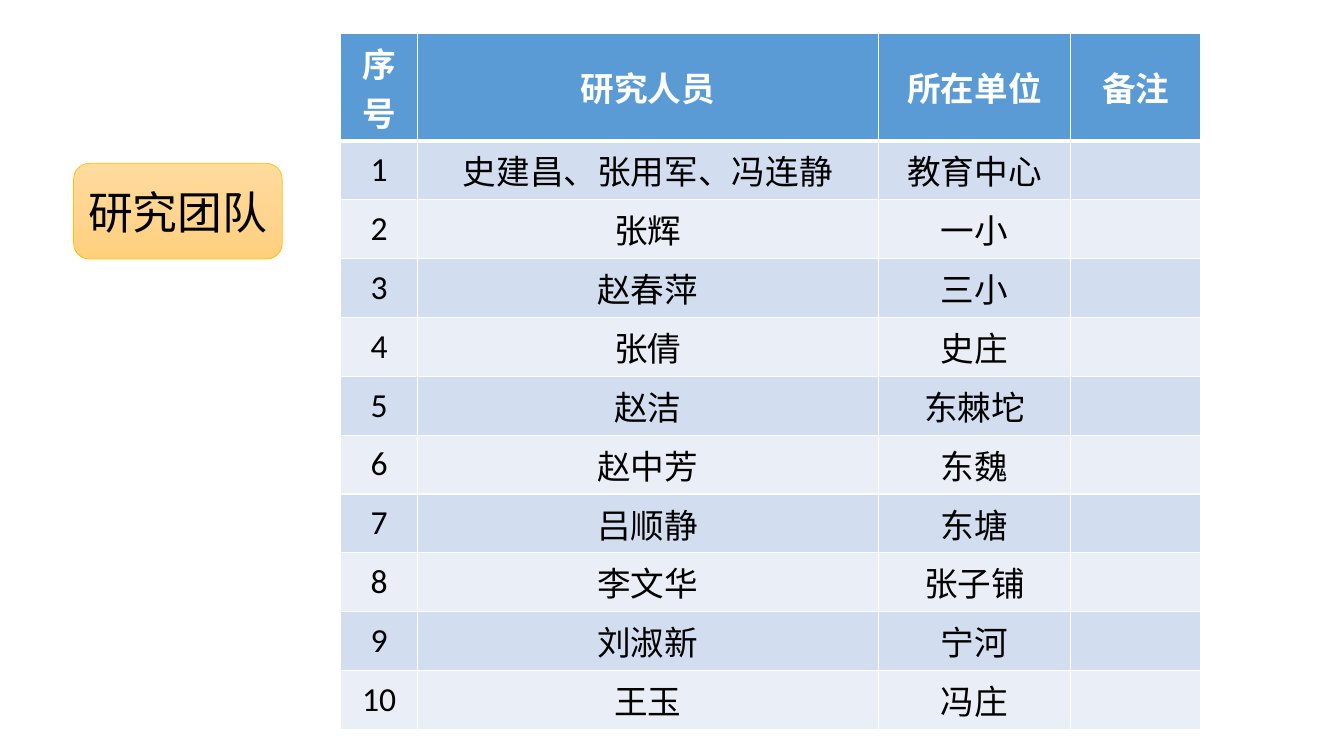
from copy import deepcopy

from lxml.etree import SubElement
from pptx import Presentation
from pptx.dml.color import RGBColor
from pptx.enum.shapes import MSO_SHAPE
from pptx.enum.text import MSO_ANCHOR, PP_ALIGN
from pptx.oxml.ns import qn
from pptx.util import Inches, Pt

FONT = "Calibri"
HEADERS = ["序号", "研究人员", "所在单位", "备注"]
TEAM = [
    ("史建昌、张用军、冯连静", "教育中心"),
    ("张辉", "一小"),
    ("赵春萍", "三小"),
    ("张倩", "史庄"),
    ("赵洁", "东棘坨"),
    ("赵中芳", "东魏"),
    ("吕顺静", "东塘"),
    ("李文华", "张子铺"),
    ("刘淑新", "宁河"),
    ("王玉", "冯庄"),
]
COL_WIDTHS = [0.76, 4.57, 1.91, 1.29]
ROW_HEIGHT = 0.58
HEADER_FILL = "5B9BD5"
BAND_FILLS = ["D2DEEF", "EAEFF7"]


def rgb(value):
    return RGBColor.from_string(value)


def add_text(tf, text, size, color, bold=False):
    p = tf.paragraphs[0]
    p.alignment = PP_ALIGN.CENTER
    r = p.add_run()
    r.text = text
    r.font.name = FONT
    r.font.size = Pt(size)
    r.font.bold = bold
    r.font.color.rgb = rgb(color)


def fill_gradient(sp, colors):
    """Top-to-bottom gradient with evenly spaced colours."""
    sp.fill.gradient()
    sp.fill.gradient_angle = 270
    stop_list = sp._element.spPr.find(qn("a:gradFill")).find(qn("a:gsLst"))
    while len(stop_list) < len(colors):
        stop_list.append(deepcopy(stop_list[-1]))
    for i, (stop, color) in enumerate(zip(sp.fill.gradient_stops, colors)):
        stop.position = i / (len(colors) - 1)
        stop.color.rgb = rgb(color)


def add_label(s, text, left, top, width, height):
    sp = s.shapes.add_shape(MSO_SHAPE.FLOWCHART_ALTERNATE_PROCESS, Inches(left),
                            Inches(top), Inches(width), Inches(height))
    sp.shadow.inherit = False
    fill_gradient(sp, ["FFDB9E", "FFD590", "FFD07C"])
    sp.line.color.rgb = rgb("FFC000")
    sp.line.width = Pt(0.5)
    sp.text_frame.word_wrap = True
    sp.text_frame.vertical_anchor = MSO_ANCHOR.MIDDLE
    add_text(sp.text_frame, text, 32, "000000")


def set_borders(cell, color, widths):
    tc_pr = cell._tc.get_or_add_tcPr()
    for side, width in zip("LRTB", widths):
        ln = SubElement(tc_pr, qn(f"a:ln{side}"), w=str(Pt(width)))
        solid = SubElement(ln, qn("a:solidFill"))
        SubElement(solid, qn("a:srgbClr"), val=color)


def add_team_table(s, left, top):
    rows = [HEADERS] + [(str(n), people, unit, "")
                        for n, (people, unit) in enumerate(TEAM, 1)]
    table = s.shapes.add_table(
        len(rows), len(HEADERS), Inches(left), Inches(top),
        Inches(sum(COL_WIDTHS)), Inches(ROW_HEIGHT * len(rows))).table
    for column, width in zip(table.columns, COL_WIDTHS):
        column.width = Inches(width)
    for i, row in enumerate(rows):
        table.rows[i].height = Inches(ROW_HEIGHT)
        header = i == 0
        for j, text in enumerate(row):
            cell = table.cell(i, j)
            # The rule under the header is thicker
            set_borders(cell, "FFFFFF",
                        (1, 1, 3 if i == 1 else 1, 3 if header else 1))
            cell.fill.solid()
            cell.fill.fore_color.rgb = rgb(
                HEADER_FILL if header else BAND_FILLS[(i - 1) % 2])
            cell.vertical_anchor = MSO_ANCHOR.MIDDLE
            if text:
                add_text(cell.text_frame, text, 24,
                         "FFFFFF" if header else "000000", header)


def main():
    prs = Presentation()
    prs.slide_width = Inches(13.33)
    prs.slide_height = Inches(7.5)
    s = prs.slides.add_slide(prs.slide_layouts[6])

    # Section label
    add_label(s, "研究团队", 0.73, 1.62, 2.07, 0.95)
    # Research team members
    add_team_table(s, 3.38, 0.33)

    prs.save("out.pptx")


if __name__ == "__main__":
    main()
